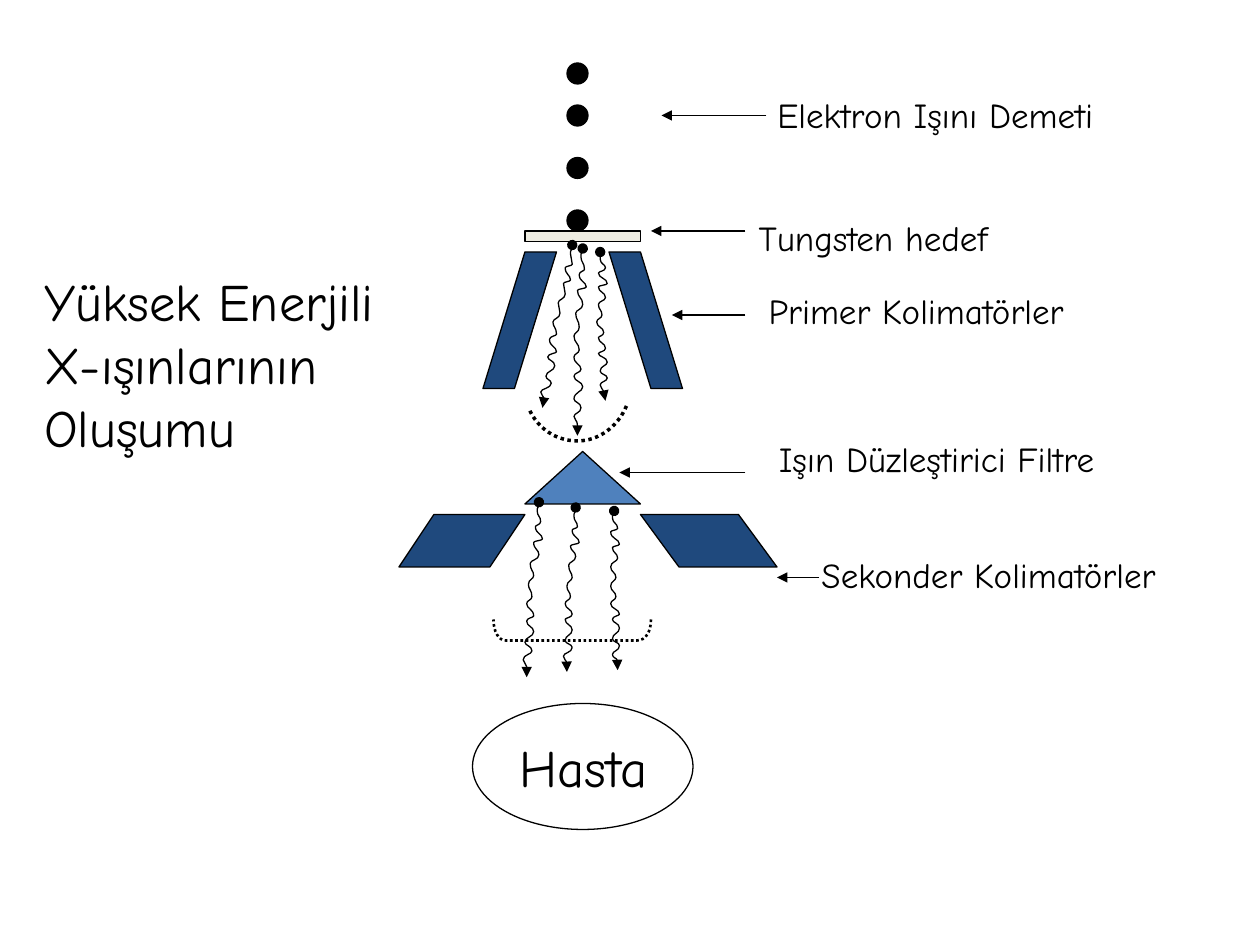
from lxml.etree import SubElement
from pptx import Presentation
from pptx.dml.color import RGBColor
from pptx.enum.dml import MSO_LINE
from pptx.enum.shapes import MSO_CONNECTOR, MSO_SHAPE
from pptx.enum.text import MSO_ANCHOR, MSO_AUTO_SIZE, PP_ALIGN
from pptx.oxml.ns import qn
from pptx.util import Pt

FONT = "Comic Neue"
BLACK, NAVY, BLUE, CREAM = "000000", "1F497D", "4F81BD", "EEECE1"

# Shape of a ray: (fraction of its height, sideways offset from its chord)
WAVE = [(0.05, -0.5), (0.11, 2), (0.14, -1.5), (0.21, 3), (0.23, -1.5),
        (0.3, 1.5), (0.35, -2.5), (0.42, 0), (0.47, -3), (0.54, 0),
        (0.58, -3), (0.65, 1.5), (0.68, -2.5), (0.74, 2), (0.8, -2),
        (0.85, 2), (0.9, -2.5), (0.94, 0), (1, 0)]


def color(hex_value):
    return RGBColor.from_string(hex_value)


def style(sp, fill=None, width=0.75):
    sp.shadow.inherit = False
    if fill:
        sp.fill.solid()
        sp.fill.fore_color.rgb = color(fill)
    else:
        sp.fill.background()
    sp.line.color.rgb = color(BLACK)
    sp.line.width = Pt(width)


def add_end(sp, tag, kind):
    ln = sp._element.spPr.find(qn("a:ln"))
    SubElement(ln, qn(tag)).set("type", kind)


def add_preset(shapes, kind, x, y, w, h, fill=None):
    sp = shapes.add_shape(kind, Pt(x), Pt(y), Pt(w), Pt(h))
    style(sp, fill)


def add_outline(s, points, closed):
    builder = s.shapes.build_freeform(*points[0], scale=Pt(1))
    builder.add_line_segments(points[1:], close=closed)
    return builder.convert_to_shape()


def add_curve(s, points, width=0.75):
    """Draw a Bezier curve: a start point, then three points per segment."""
    sp = add_outline(s, points, closed=False)
    outline = sp._element.find(".//" + qn("a:path"))
    steps = outline.findall(qn("a:lnTo"))
    for i in range(0, len(steps), 3):
        bezier = SubElement(outline, qn("a:cubicBezTo"))
        for step in steps[i:i + 3]:
            bezier.append(step[0])
            outline.remove(step)
    style(sp, width=width)
    return sp


def add_ray(s, x1, y1, x2, y2):
    points = [(x1, y1)]
    for t, offset in WAVE:
        px, py = points[-1]
        x, y = x1 + t * (x2 - x1) + offset, y1 + t * (y2 - y1)
        middle = (py + y) / 2
        points += [(px, middle), (x, middle), (x, y)]
    sp = add_curve(s, points)
    add_end(sp, "a:headEnd", "oval")
    add_end(sp, "a:tailEnd", "triangle")


def add_wavefront(s, points, width):
    sp = add_curve(s, points, width)
    sp.line.dash_style = MSO_LINE.ROUND_DOT


def add_arrow(s, x1, x2, y):
    c = s.shapes.add_connector(MSO_CONNECTOR.STRAIGHT, Pt(x1), Pt(y), Pt(x2), Pt(y))
    c.line.color.rgb = color(BLACK)
    c.line.width = Pt(0.75)
    add_end(c, "a:tailEnd", "triangle")
    SubElement(c._element.spPr, qn("a:effectLst"))


def add_text(shapes, lines, x, y, w, h, size=20, align=None, anchor=MSO_ANCHOR.TOP):
    tf = shapes.add_textbox(Pt(x), Pt(y), Pt(w), Pt(h)).text_frame
    tf.word_wrap = False
    tf.auto_size = MSO_AUTO_SIZE.SHAPE_TO_FIT_TEXT
    tf.vertical_anchor = anchor
    tf.margin_left = tf.margin_right = tf.margin_top = tf.margin_bottom = Pt(3.6)
    for i, line in enumerate(lines):
        p = tf.add_paragraph() if i else tf.paragraphs[0]
        p.alignment = align
        r = p.add_run()
        r.text = line
        r.font.size = Pt(size)
        r.font.name = FONT
        r.font.color.rgb = color(BLACK)


def main():
    prs = Presentation()
    prs.slide_width, prs.slide_height = Pt(720), Pt(540)
    s = prs.slides.add_slide(prs.slide_layouts[6])

    # Primary and secondary collimators
    for points in (
        [(300, 144), (276, 222), (294.5, 222), (318, 144)],
        [(366, 144), (390, 222), (371.5, 222), (348, 144)],
        [(248.5, 294), (228, 324), (279.5, 324), (300, 294)],
        [(422, 294), (444, 324), (388, 324), (366, 294)],
    ):
        style(add_outline(s, points, closed=True), NAVY)

    # Tungsten target and electron beam
    add_preset(s.shapes, MSO_SHAPE.RECTANGLE, 300, 132, 66, 6, CREAM)
    for y in (36, 60, 90, 120):
        add_preset(s.shapes, MSO_SHAPE.OVAL, 324, y, 12, 12, BLACK)

    # Flattening filter
    add_preset(s.shapes, MSO_SHAPE.ISOSCELES_TRIANGLE, 300, 258, 66, 30, BLUE)

    # Rays above and below the filter
    for ray in (
        (332.6, 141.8, 329.8, 249), (343.4, 144, 345.6, 229),
        (326.9, 140.4, 310.3, 233.3), (308.2, 287.3, 301, 386.6),
        (329, 290.2, 324, 384.5), (350.6, 291.6, 352.8, 383),
    ):
        add_ray(s, *ray)

    # Wavefronts: peaked above the filter, flat below it
    add_wavefront(s, [(357.8, 231.8), (352.8, 244), (342, 252), (329.8, 252),
                      (318.2, 252), (307.4, 244.8), (301.7, 232.6)], 2)
    add_wavefront(s, [(372, 354), (372, 360.6), (368.6, 366), (364.3, 366),
                      (364.3, 366), (289.4, 366), (289.4, 366),
                      (285.1, 366), (282, 360.6), (282, 354)], 1.5)

    # Patient
    patient = s.shapes.add_group_shape().shapes
    add_preset(patient, MSO_SHAPE.OVAL, 270, 402, 126, 72)
    add_text(patient, ["Hasta"], 288, 413.5, 91, 49, 30, PP_ALIGN.CENTER, MSO_ANCHOR.MIDDLE)

    # Labels: text, left, top, width, then arrow start, end and height
    for text, x, y, w, x1, x2, arrow_y in (
        ("Elektron Işını Demeti", 440.6, 49.7, 209, 438, 378, 66),
        ("Tungsten hedef", 430, 120.2, 155.5, 426, 372, 132),
        ("Primer Kolimatörler", 435.6, 162, 191, 426, 384, 180),
        ("Işın Düzleştirici Filtre", 441.4, 246.2, 218, 426, 354, 270),
        ("Sekonder Kolimatörler", 465.8, 312.5, 218, 468, 444, 330),
    ):
        add_text(s.shapes, [text], x, y, w, 35)
        add_arrow(s, x1, x2, arrow_y)

    # Title
    add_text(s.shapes, ["Yüksek Enerjili", "X-ışınlarının", "Oluşumu"],
             21.6, 150.5, 217.5, 133, 30)

    prs.save("out.pptx")


if __name__ == "__main__":
    main()
